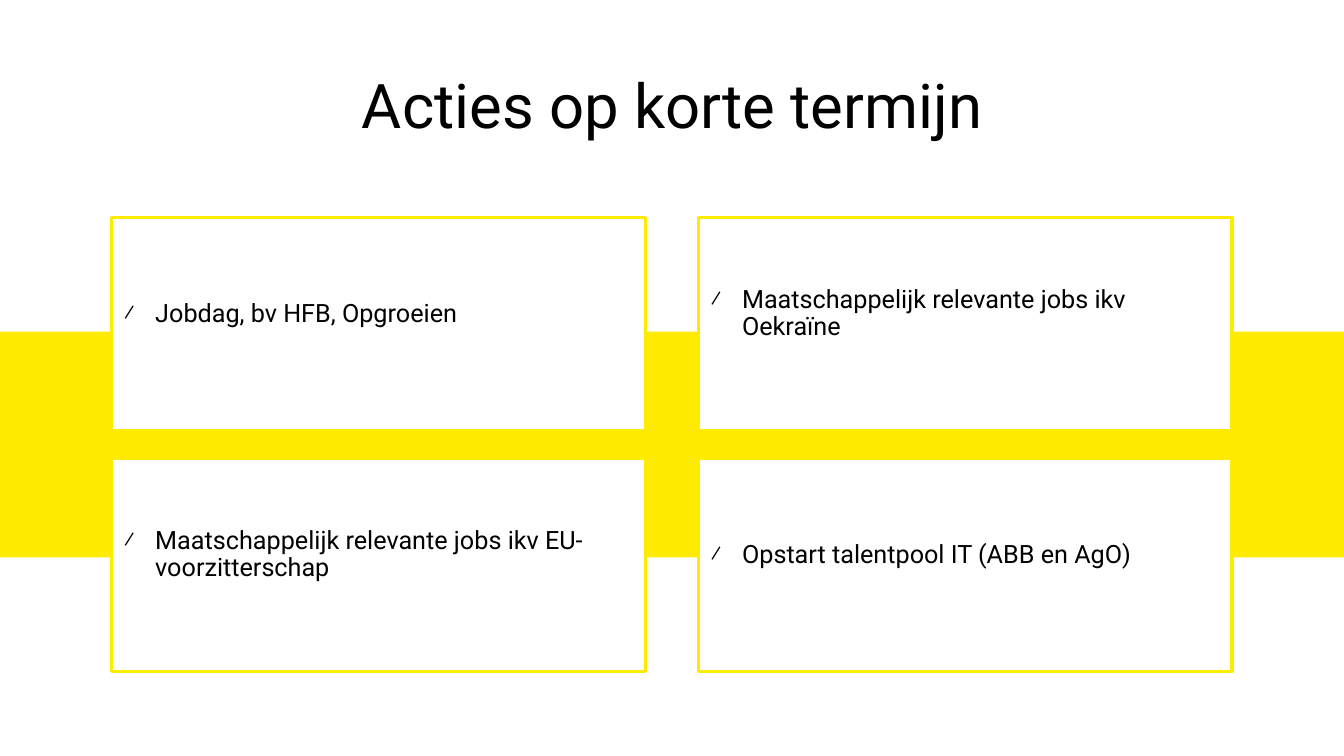
from lxml.etree import SubElement
from pptx import Presentation
from pptx.dml.color import RGBColor
from pptx.enum.shapes import MSO_SHAPE
from pptx.enum.text import MSO_ANCHOR, PP_ALIGN
from pptx.oxml.ns import qn
from pptx.util import Inches, Pt

HUES = {"yellow": "FFEB00", "white": "FFFFFF", "black": "000000"}
TITLE = "Acties op korte termijn"
CARDS = [
    ["Jobdag, bv HFB, Opgroeien", "Maatschappelijk relevante jobs ikv Oekraïne"],
    ["Maatschappelijk relevante jobs ikv EU-voorzitterschap", "Opstart talentpool IT (ABB en AgO)"],
]
FRAME = {"word_wrap": True, "vertical_anchor": MSO_ANCHOR.MIDDLE}
HEAD = {"alignment": PP_ALIGN.CENTER, "line_spacing": Pt(38)}
ITEM = {"alignment": PP_ALIGN.LEFT, "line_spacing": 0.9}


def shade(name):
    """Return the named colour."""
    return RGBColor.from_string(HUES[name])


def apply(target, values):
    """Set every attribute in values on target."""
    for key, value in values.items():
        setattr(target, key, value)


def place(box):
    """Turn a box in inches into lengths."""
    return [Inches(side) for side in box]


def write(shape, text, size, style, insets, mark=None):
    """Write one formatted paragraph into a shape."""
    frame = shape.text_frame
    apply(frame, FRAME)
    for side, gap in zip(("left", "top", "right", "bottom"), insets):
        setattr(frame, f"margin_{side}", Inches(gap))
    para = frame.paragraphs[0]
    para.text = text
    apply(para, style)
    if mark:
        props = para._p.get_or_add_pPr()
        props.set("marL", str(Inches(0.31)))
        props.set("indent", str(-Inches(0.31)))
        SubElement(props, qn("a:buSzPct"), val="90000")
        SubElement(props, qn("a:buFont"), typeface="Roboto")
        SubElement(props, qn("a:buChar"), char=mark)
    font = para.runs[0].font
    apply(font, {"name": "Roboto", "size": Pt(size)})
    font.color.rgb = shade("black")


def panel(slide, box, fill, line=None):
    """Draw a flat rectangle with an optional outline."""
    shape = slide.shapes.add_shape(MSO_SHAPE.RECTANGLE, *place(box))
    shape.shadow.inherit = False
    shape.fill.solid()
    shape.fill.fore_color.rgb = shade(fill)
    if line:
        shape.line.color.rgb = shade(line)
        shape.line.width = Pt(2.25)
    else:
        shape.line.fill.background()
    return shape


def title(slide, box):
    """Place the slide title."""
    write(slide.shapes.add_textbox(*place(box)), TITLE, 44, HEAD, (0, 0, 0, 0))


def grid(slide, box, gaps):
    """Fill the box with a grid of outlined cards."""
    left, top, width, height = box
    across, down = gaps
    wide = (width - across * (len(CARDS[0]) - 1)) / len(CARDS[0])
    tall = (height - down * (len(CARDS) - 1)) / len(CARDS)
    for row, texts in enumerate(CARDS):
        for col, text in enumerate(texts):
            spot = (left + col * (wide + across), top + row * (tall + down), wide, tall)
            card = panel(slide, spot, "white", "yellow")
            write(card, text, 18, ITEM, (0.12, 0, 0.12, 0.2), "⁄")


def main():
    """Build and save the slide."""
    deck = Presentation()
    apply(deck, {"slide_width": Inches(13.33), "slide_height": Inches(7.5)})
    slide = deck.slides.add_slide(deck.slide_layouts[6])
    panel(slide, (0, 3.29, 13.33, 2.24), "yellow")
    title(slide, (0.41, 0.47, 12.52, 1.33))
    grid(slide, (1.11, 2.16, 11.11, 4.5), (0.53, 0.28))
    deck.save("out.pptx")


if __name__ == "__main__":
    main()
